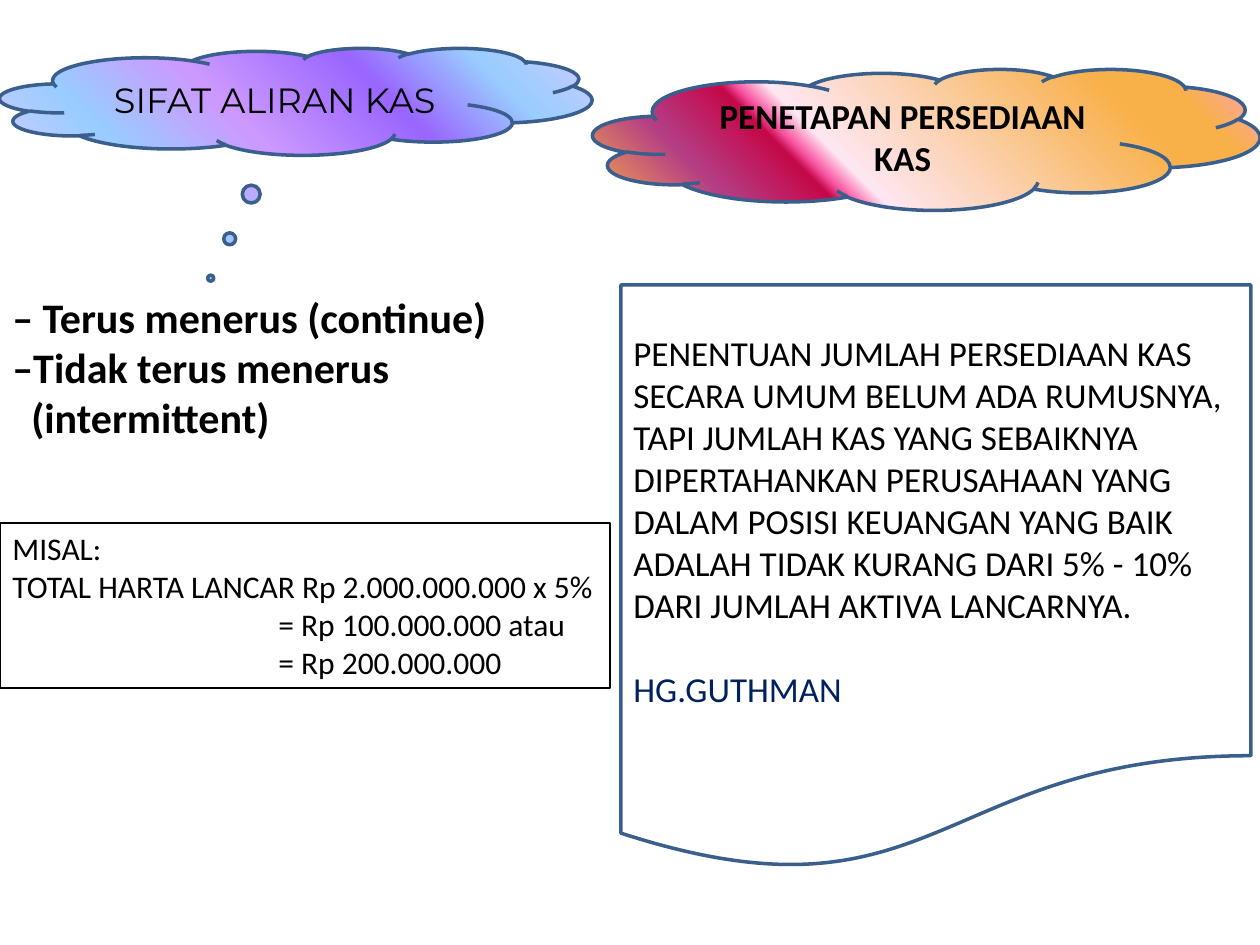
from pptx import Presentation
from pptx.dml.color import RGBColor as Rgb
from pptx.enum.shapes import MSO_SHAPE as Shape
from pptx.enum.text import MSO_ANCHOR as Anchor, PP_ALIGN as Align
from pptx.oxml import parse_xml
from pptx.oxml.ns import nsdecls
from pptx.util import Pt

PX = 914400 / 126
HUES = {"ink": "000000", "edge": "3A5F8C", "navy": "002060"}
COOL = [(0, "CCCCFF"), (18, "99CCFF"), (36, "9966FF"), (61, "CC99FF"),
        (82, "99CCFF"), (100, "CCCCFF")]
WARM = [(0, "FC9FCB"), (13, "F8B049"), (21, "F8B049"), (63, "FEE7F2"),
        (67, "F952A0"), (69, "C50849"), (82, "B43E85"), (100, "F8B049")]


def emu(px):
    return round(px * PX)


def color(name):
    return Rgb.from_string(HUES[name])


def blend(shape, stops):
    """Fill a shape with a many-stop gradient running to the lower left."""
    marks = "".join(f'<a:gs pos="{pos * 1000}"><a:srgbClr val="{hue}"/></a:gs>'
                    for pos, hue in stops)
    fill = parse_xml(f'<a:gradFill {nsdecls("a")} rotWithShape="1">'
                     f'<a:gsLst>{marks}</a:gsLst>'
                     '<a:lin ang="8100000" scaled="0"/></a:gradFill>')
    shape.fill.background()
    props = shape.fill._xPr
    props.replace(props.eg_fillProperties, fill)


def draw(slide, kind, box, stops=None, edge="edge", width=2):
    shape = slide.shapes.add_shape(kind, *map(emu, box))
    shape.shadow.inherit = False
    if stops:
        blend(shape, stops)
    else:
        shape.fill.background()
    shape.line.color.rgb = color(edge)
    shape.line.width = Pt(width)
    return shape


def write(shape, lines, size, face="Calibri", bold=False, align=Align.LEFT,
          anchor=Anchor.MIDDLE):
    """Each line is its text, left indent in px, space before in pt, colour."""
    frame = shape.text_frame
    frame.word_wrap = True
    frame.vertical_anchor = anchor
    for i, (text, indent, gap, hue) in enumerate(lines):
        para = frame.paragraphs[0] if i == 0 else frame.add_paragraph()
        para.text = text
        para.alignment = align
        if indent:
            para._p.get_or_add_pPr().set("marL", str(emu(indent)))
        if gap:
            para.space_before = Pt(gap)
        font = para.font
        font.name, font.size, font.bold = face, Pt(size), bold
        font.color.rgb = color(hue)


def flow(slide, box):
    """Thought cloud with the kinds of cash flow below it."""
    x, y, w, h = box
    cloud = draw(slide, Shape.CLOUD_CALLOUT, (x, y, w, 107), COOL)
    cloud.adjustments[0] = -0.144
    cloud.adjustments[1] = 1.651
    write(cloud, [("SIFAT ALIRAN KAS", 0, 0, "ink")], 20, "Montserrat",
          align=Align.CENTER)
    kinds = slide.shapes.add_textbox(*map(emu, (x, y + 237, w - 2, h - 237)))
    write(kinds, [("– Terus menerus (continue)", 0, 0, "ink"),
                  ("–Tidak terus menerus", 0, 0, "ink"),
                  ("(intermittent)", 19, 0, "ink")],
          24, bold=True, align=Align.JUSTIFY, anchor=Anchor.TOP)


def case(slide, box):
    """Worked example in a thin frame."""
    frame = draw(slide, Shape.RECTANGLE, box, edge="ink", width=0.75)
    write(frame, [("MISAL:", 0, 0, "ink"),
                  ("TOTAL HARTA LANCAR Rp 2.000.000.000 x 5%", 0, 0, "ink"),
                  ("= Rp 100.000.000 atau", 266, 0, "ink"),
                  ("= Rp 200.000.000", 266, 0, "ink")],
          18, anchor=Anchor.TOP)


def stock(slide, box):
    """Cloud heading with the rule on cash holdings below it."""
    x, y, w, h = box
    cloud = draw(slide, Shape.CLOUD, (x, y, w, 141), WARM)
    write(cloud, [("PENETAPAN PERSEDIAAN KAS", 0, 0, "ink")], 20, bold=True,
          align=Align.CENTER)
    page = draw(slide, Shape.FLOWCHART_DOCUMENT,
                (x + 28, y + 216, 630, h - 216))
    rule = ("PENENTUAN JUMLAH PERSEDIAAN KAS SECARA UMUM BELUM ADA RUMUSNYA, "
            "TAPI JUMLAH KAS YANG SEBAIKNYA DIPERTAHANKAN PERUSAHAAN YANG "
            "DALAM POSISI KEUANGAN YANG BAIK ADALAH TIDAK KURANG DARI "
            "5% - 10% DARI JUMLAH AKTIVA LANCARNYA.")
    write(page, [(rule, 0, 0, "ink"), ("HG.GUTHMAN", 0, 24, "navy")], 20)


def main():
    deck = Presentation()
    deck.slide_width, deck.slide_height = emu(1260), emu(945)
    slide = deck.slides.add_slide(deck.slide_layouts[6])
    flow(slide, (0, 48, 592, 402))
    stock(slide, (593, 69, 667, 803))
    case(slide, (0, 523, 610, 165))
    deck.save("out.pptx")


if __name__ == "__main__":
    main()
